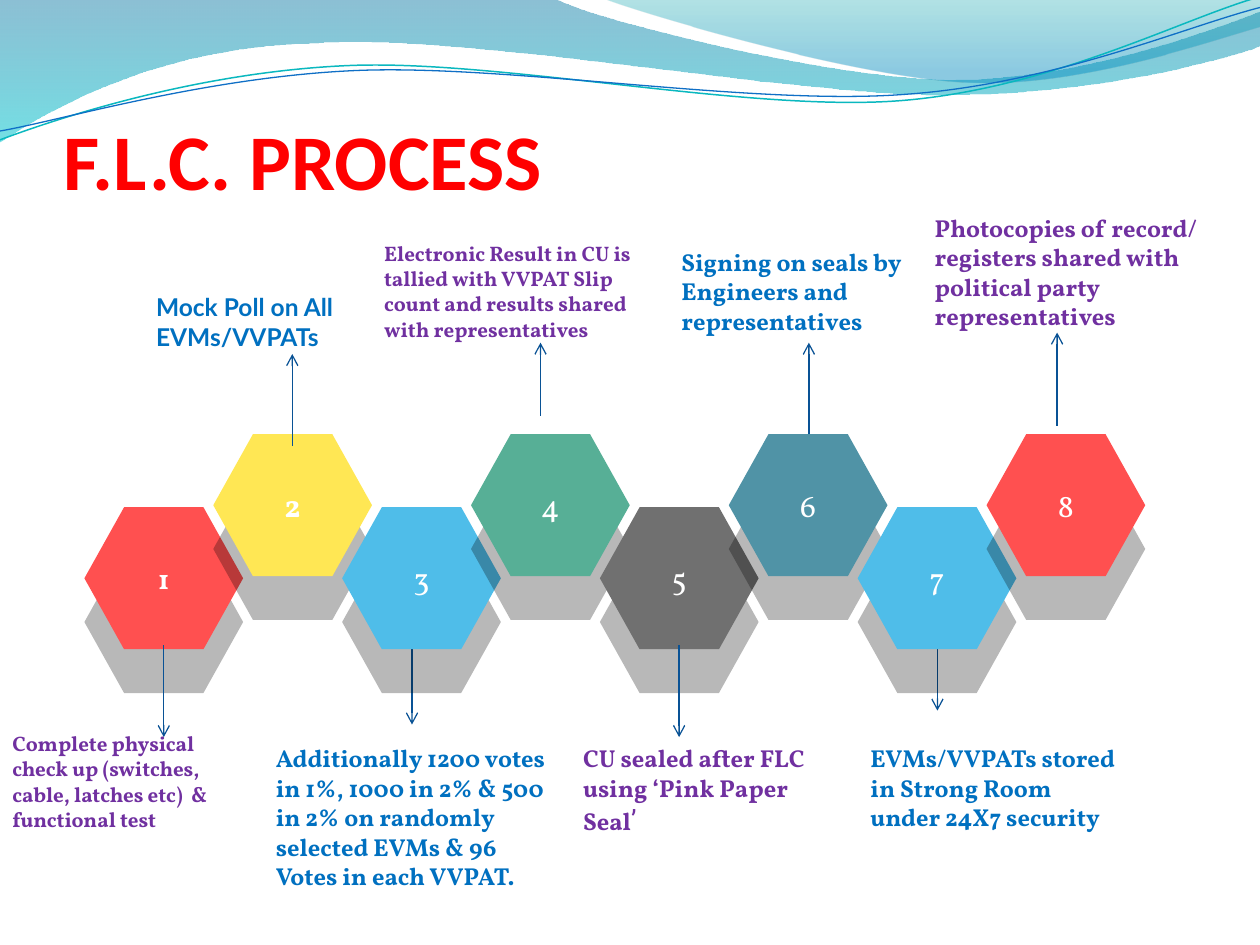
import math

import pptx
import pptx.util
import pptx.dml.color
import pptx.enum.shapes
import pptx.enum.text
import pptx.oxml
from pptx.oxml.ns import qn
from lxml import etree

Inches, Pt = pptx.util.Inches, pptx.util.Pt
RGBColor = pptx.dml.color.RGBColor
ANCHOR = pptx.enum.text.MSO_ANCHOR
ALIGN = pptx.enum.text.PP_ALIGN

RED = RGBColor(0xFF, 0x50, 0x50)
YELLOW = RGBColor(0xFF, 0xE7, 0x54)
SKY = RGBColor(0x4F, 0xBD, 0xE9)
GREEN = RGBColor(0x57, 0xAF, 0x96)
GREY = RGBColor(0x70, 0x70, 0x70)
TEAL = RGBColor(0x50, 0x93, 0xA6)
WHITE = RGBColor(0xFF, 0xFF, 0xFF)
TITLE_RED = RGBColor(0xFF, 0x00, 0x00)
PURPLE = RGBColor(0x70, 0x30, 0xA0)
BLUE = RGBColor(0x00, 0x70, 0xC0)
ARROW_BLUE = RGBColor(0x09, 0x52, 0x95)
WAVE_BLUE = RGBColor(0x00, 0x74, 0xA1)
WAVE_CYAN = RGBColor(0x00, 0xC6, 0xCF)
CREST_TEAL = RGBColor(0x00, 0xA1, 0xA9)
CREST_BLUE = RGBColor(0x00, 0x8B, 0xBF)
RIBBON_TEAL = RGBColor(0x0A, 0xB8, 0xBF)
RIBBON_BLUE = RGBColor(0x0F, 0x6F, 0xC6)

# Paths: a start point, then one point for a straight line or three for a curve.
# Gradient stops: position, colour, opacity in percent.
WAVES = [
    ([[(0, 0)], [(4.4, -0.01)], [(4.76, 0.17), (6.64, 0.63), (7.58, 0.63)],
      [(8.53, 0.63), (9.58, 0.26), (10, 0.09)], [(10.01, 0.36)],
      [(9.83, 0.44), (8.7, 0.76), (7.46, 0.75)],
      [(6.22, 0.75), (3.82, 0.28), (2.57, 0.34)],
      [(1.29, 0.36), (0.46, 0.83), (-0.01, 1.13)], [(0, 0)]],
     [(0, WAVE_BLUE, 45), (1, WAVE_CYAN, 55)]),
    ([[(4.79, -0.01)], [(5.09, 0.11), (6.82, 0.62), (7.69, 0.65)],
      [(8.56, 0.69), (9.61, 0.32), (10, 0.21)], [(10, 0)], [(4.79, -0.01)]],
     [(0, CREST_TEAL, 30), (0.8, CREST_BLUE, 45)]),
]
# Path, centre, colour, width
RIBBONS = [
    ([[(0, 1.11)], [(0.48, 0.93), (1.58, 0.57), (2.77, 0.52)],
      [(3.95, 0.47), (5.93, 0.89), (7.13, 0.8)],
      [(8.33, 0.71), (9.38, 0.15), (9.98, -0.02)]], (4.99, 0.58), RIBBON_TEAL, 0.85),
    ([[(0, 1.04)], [(0.47, 0.96), (1.64, 0.61), (2.83, 0.56)],
      [(4.03, 0.51), (5.97, 0.84), (7.17, 0.75)],
      [(8.36, 0.67), (9.41, 0.21), (10, 0.06)]], (5, 0.59), RIBBON_BLUE, 0.75),
]
RIBBON_TILT = 2.7

# Per step: hexagon colour, number size, number bold
HEXAGONS = [(RED, 16, True), (YELLOW, 18, True), (SKY, 18, None), (GREEN, 18, None),
            (GREY, 18, None), (TEAL, 18, None), (SKY, 18, None), (RED, 18, None)]
# Per step: x, start y, end y, drawn behind the hexagon
ARROWS = [(1.3, 5.12, 5.85, False), (2.32, 3.54, 2.81, False),
          (3.27, 5.01, 5.75, True), (4.29, 3.3, 2.72, False),
          (5.39, 5.12, 5.85, False), (6.42, 3.75, 2.72, True),
          (7.44, 4.91, 5.64, True), (8.39, 3.38, 2.64, True)]
# Per step: box, runs of (text, size, font, bold), colour
CAPTIONS = [
    ((0, 5.75, 1.93, 0.91),
     [("Complete physical check up (switches, cable, latches etc)  & functional test",
       12, "Vollkorn", True)], PURPLE),
    ((1.14, 2.27, 2.2, 0.57),
     [("Mock Poll on All EVMs/VVPATs", 14, "Lato", True)], BLUE),
    ((2.09, 5.85, 2.41, 1.28),
     [("Additionally 1200 votes in 1%, 1000 in 2% & 500 in 2% on randomly "
       "selected EVMs & 96 Votes in each VVPAT.", 14, "Vollkorn", True)], BLUE),
    ((2.95, 1.86, 2.36, 0.91),
     [("Electronic Result in CU is tallied with VVPAT Slip count and results "
       "shared with representatives", 12, "Vollkorn", True)], PURPLE),
    ((4.53, 5.85, 2.2, 0.84),
     [("CU sealed after FLC using ‘Pink Paper Seal", 14, "Vollkorn", True),
      ("’", 16, "Roboto Condensed", False)], PURPLE),
    ((5.31, 1.91, 2.2, 0.81),
     [("Signing on seals by Engineers and representatives", 14, "Vollkorn", True)], BLUE),
    ((6.81, 5.85, 2.2, 0.81),
     [("EVMs/VVPATs stored in Strong Room under 24X7 security",
       14, "Vollkorn", True)], BLUE),
    ((7.32, 1.64, 2.51, 1.08),
     [("Photocopies of record/ registers shared with political party representatives",
       14, "Vollkorn", True)], PURPLE),
]

HEX_LEFT, HEX_PITCH, HEX_WIDTH, HEX_HEIGHT = 0.67, 7.16 / 7, 1.26, 1.36
HEX_TOPS = (3.91, 3.33)
SHADOW = ('<a:effectLst xmlns:a="http://schemas.openxmlformats.org/drawingml/2006/main">'
          '<a:outerShdw blurRad="0" dist="317500" dir="5400000" rotWithShape="0">'
          '<a:srgbClr val="000000"><a:alpha val="28000"/></a:srgbClr>'
          '</a:outerShdw></a:effectLst>')


def add_outline(shapes, path, close):
    """Draw all points as lines, then join each group of three into a curve."""
    start, *rest = [(Inches(x), Inches(y)) for piece in path for x, y in piece]
    builder = shapes.build_freeform(*start)
    builder.add_line_segments(rest, close=close)
    outline = builder.convert_to_shape()
    outline.shadow.inherit = False
    lines = iter(list(outline._element.iter(qn("a:lnTo"))))
    for piece in path[1:]:
        first, *others = [next(lines) for _ in piece]
        if others:
            first.tag = qn("a:cubicBezTo")
            for line in others:
                first.append(line[0])
                line.getparent().remove(line)
    return outline


def add_wave(shapes, path, stops):
    wave = add_outline(shapes, path, True)
    wave.line.fill.background()
    wave.fill.gradient()
    wave.fill.gradient_angle = 270
    for stop, (position, colour, _) in zip(wave.fill.gradient_stops, stops):
        stop.position = position
        stop.color.rgb = colour
    for node, (_, _, opacity) in zip(wave.fill._xPr.iter(qn("a:srgbClr")), stops):
        etree.SubElement(node, qn("a:alpha")).set("val", str(opacity * 1000))


def add_ribbon(shapes, path, centre, colour, width):
    """Level the path about its centre, then tilt the shape back."""
    cx, cy = centre
    cos, sin = math.cos(math.radians(RIBBON_TILT)), math.sin(math.radians(RIBBON_TILT))
    level = [[(cx + (x - cx) * cos - (y - cy) * sin, cy + (x - cx) * sin + (y - cy) * cos)
              for x, y in piece] for piece in path]
    ribbon = add_outline(shapes, level, False)
    ribbon.rotation = 360 - RIBBON_TILT
    ribbon.fill.background()
    ribbon.line.color.rgb = colour
    ribbon.line.width = Pt(width)


def add_run(paragraph, text, size, font, bold, colour):
    run = paragraph.add_run()
    run.text = text
    for key, value in {"size": Pt(size), "name": font, "bold": bold}.items():
        setattr(run.font, key, value)
    run.font.color.rgb = colour


def add_text(shapes, box, runs, colour, **frame_format):
    frame = shapes.add_textbox(*map(Inches, box)).text_frame
    for key, value in {"word_wrap": True, **frame_format}.items():
        setattr(frame, key, value)
    for run in runs:
        add_run(frame.paragraphs[0], *run, colour)


def add_arrow(shapes, x, start, end):
    arrow = shapes.add_connector(pptx.enum.shapes.MSO_CONNECTOR.STRAIGHT,
                                 Inches(x), Inches(start), Inches(x), Inches(end))
    arrow.line.color.rgb = ARROW_BLUE
    arrow.line.width = Pt(0.75)
    etree.SubElement(arrow.line._get_or_add_ln(), qn("a:tailEnd")).set("type", "arrow")
    etree.SubElement(arrow._element.spPr, qn("a:effectLst"))


def add_hexagon(shapes, index, colour, size, bold):
    hexagon = shapes.add_shape(
        pptx.enum.shapes.MSO_SHAPE.HEXAGON,
        Inches(HEX_LEFT + index * HEX_PITCH), Inches(HEX_TOPS[index % 2]),
        Inches(HEX_WIDTH), Inches(HEX_HEIGHT))
    hexagon.adjustments[1] = 0.957
    hexagon.fill.solid()
    hexagon.fill.fore_color.rgb = colour
    hexagon.line.fill.background()
    hexagon._element.spPr.append(pptx.oxml.parse_xml(SHADOW))
    hexagon.text_frame.vertical_anchor = ANCHOR.MIDDLE
    number = hexagon.text_frame.paragraphs[0]
    number.alignment = ALIGN.CENTER
    add_run(number, str(index + 1), size, "Vollkorn", bold, WHITE)


def main():
    deck = pptx.Presentation()
    deck.slide_width, deck.slide_height = Inches(10), Inches(7.5)
    shapes = deck.slides.add_slide(deck.slide_layouts[6]).shapes
    for wave in WAVES:
        add_wave(shapes, *wave)
    for ribbon in RIBBONS:
        add_ribbon(shapes, *ribbon)
    add_text(shapes, (0.5, 0.77, 9.08, 0.87), [("F.L.C. PROCESS", 45, "Calibri", True)],
             TITLE_RED, vertical_anchor=ANCHOR.BOTTOM, margin_left=0, margin_right=0,
             margin_bottom=0)
    for layer in (True, False):
        for *ends, behind in ARROWS:
            if behind == layer:
                add_arrow(shapes, *ends)
        if layer:
            for index, hexagon in enumerate(HEXAGONS):
                add_hexagon(shapes, index, *hexagon)
    for caption in CAPTIONS:
        add_text(shapes, *caption)
    deck.save("out.pptx")


if __name__ == "__main__":
    main()
